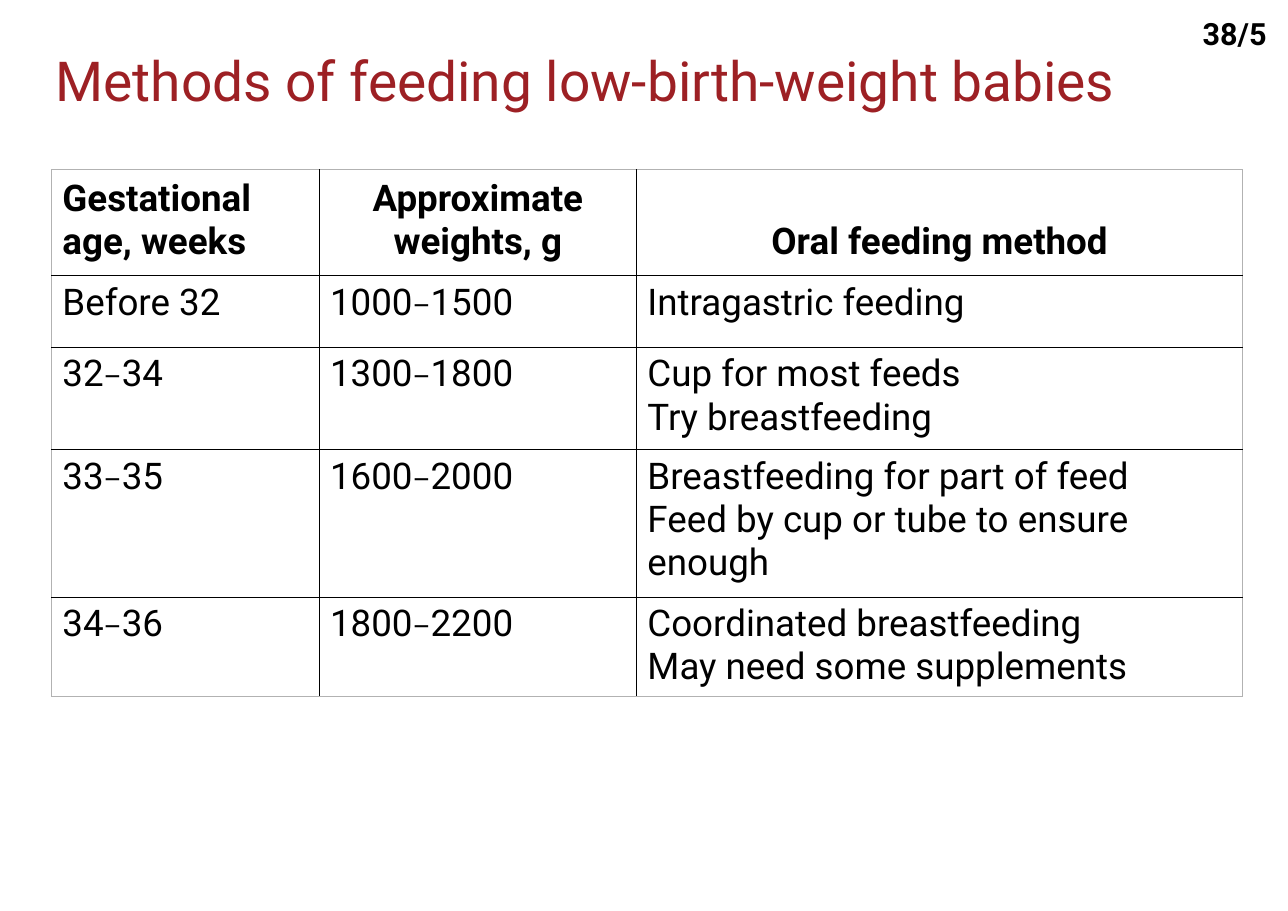
from dataclasses import dataclass
from lxml.etree import SubElement
from pptx import Presentation
from pptx.dml.color import RGBColor
from pptx.enum.text import MSO_ANCHOR, PP_ALIGN
from pptx.oxml.ns import qn
from pptx.util import Cm, Pt

TITLE = "Methods of feeding low-birth-weight babies"
PAGE = "38/5"
HEADS = ("Gestational age, weeks", "Approximate weights, g", "Oral feeding method")
ROWS = [
    ("Before 32", "1000–1500", "Intragastric feeding"),
    ("32–34", "1300–1800", "Cup for most feeds\nTry breastfeeding"),
    ("33–35", "1600–2000",
     "Breastfeeding for part of feed\nFeed by cup or tube to ensure enough"),
    ("34–36", "1800–2200", "Coordinated breastfeeding\nMay need some supplements"),
]
WIDTHS = (6.17, 7.32, 13.97)
HEIGHTS = (2.39, 1.65, 2.36, 3.4, 2.26)


@dataclass(frozen=True)
class Theme:
    font: str = "Roboto"
    title: str = "9D2024"
    text: str = "000000"
    inner: str = "000000"
    outer: str = "B2B2B2"
    title_size: int = 36
    body_size: int = 24
    page_size: int = 20
    dash_size: int = 18
    line: float = 0.75


THEME = Theme()


def style(par, size, color=THEME.text, bold=False, align=PP_ALIGN.LEFT):
    par.alignment = align
    font = par.font
    font.name, font.size, font.bold = THEME.font, Pt(size), bold
    font.color.rgb = RGBColor.from_string(color)


def pad(item, side, top, bottom):
    item.margin_left = item.margin_right = Cm(side)
    item.margin_top, item.margin_bottom = Cm(top), Cm(bottom)


def write(par, text):
    """Add the text, with each en dash set smaller than the digits."""
    for i, part in enumerate(text.split("–")):
        if i:
            dash = par.add_run()
            dash.text = "–"
            dash.font.size = Pt(THEME.dash_size)
        par.add_run().text = part


def border(cell, row, col):
    """Draw the four edges, lighter on the outside of the table."""
    outside = {"L": col == 0, "R": col == len(HEADS) - 1,
               "T": row == 0, "B": row == len(ROWS)}
    props = cell._tc.get_or_add_tcPr()
    for side, edge in outside.items():
        line = SubElement(props, qn(f"a:ln{side}"), w=str(Pt(THEME.line)))
        fill = SubElement(line, qn("a:solidFill"))
        SubElement(fill, qn("a:srgbClr"), val=THEME.outer if edge else THEME.inner)


def add_title(slide):
    title = slide.shapes.title
    title.left, title.top, title.width, title.height = map(Cm, (1, 0.91, 27.86, 3.78))
    frame = title.text_frame
    frame.text = TITLE
    frame.vertical_anchor = MSO_ANCHOR.TOP
    pad(frame, 0.28, 0.15, 0.15)
    style(frame.paragraphs[0], THEME.title_size, THEME.title)


def add_page(slide):
    frame = slide.shapes.add_textbox(*map(Cm, (27.25, 0.2, 2.24, 1.14))).text_frame
    frame.text = PAGE
    frame.word_wrap = True
    pad(frame, 0.28, 0.15, 0.15)
    style(frame.paragraphs[0], THEME.page_size, bold=True, align=PP_ALIGN.RIGHT)


def add_grid(slide):
    table = slide.shapes.add_table(
        len(HEIGHTS), len(WIDTHS), Cm(1.19), Cm(3.91),
        Cm(sum(WIDTHS)), Cm(sum(HEIGHTS))).table
    table.first_row = table.horz_banding = False
    for col, width in zip(table.columns, WIDTHS):
        col.width = Cm(width)
    for row, height in zip(table.rows, HEIGHTS):
        row.height = Cm(height)
    for r, texts in enumerate([HEADS, *ROWS]):
        head = r == 0
        for c, text in enumerate(texts):
            cell = table.cell(r, c)
            border(cell, r, c)
            cell.fill.background()
            pad(cell, 0.25, 0.13, 0.28 if head else 0.13)
            cell.vertical_anchor = MSO_ANCHOR.BOTTOM if head else MSO_ANCHOR.TOP
            align = PP_ALIGN.CENTER if head and c else PP_ALIGN.LEFT
            frame = cell.text_frame
            for i, line in enumerate(text.split("\n")):
                par = frame.add_paragraph() if i else frame.paragraphs[0]
                style(par, THEME.body_size, bold=head, align=align)
                write(par, line)


def main():
    deck = Presentation()
    deck.slide_width, deck.slide_height = Cm(29.7), Cm(21)
    slide = deck.slides.add_slide(deck.slide_layouts[5])
    add_title(slide)
    add_page(slide)
    add_grid(slide)
    deck.save("out.pptx")


if __name__ == "__main__":
    main()
